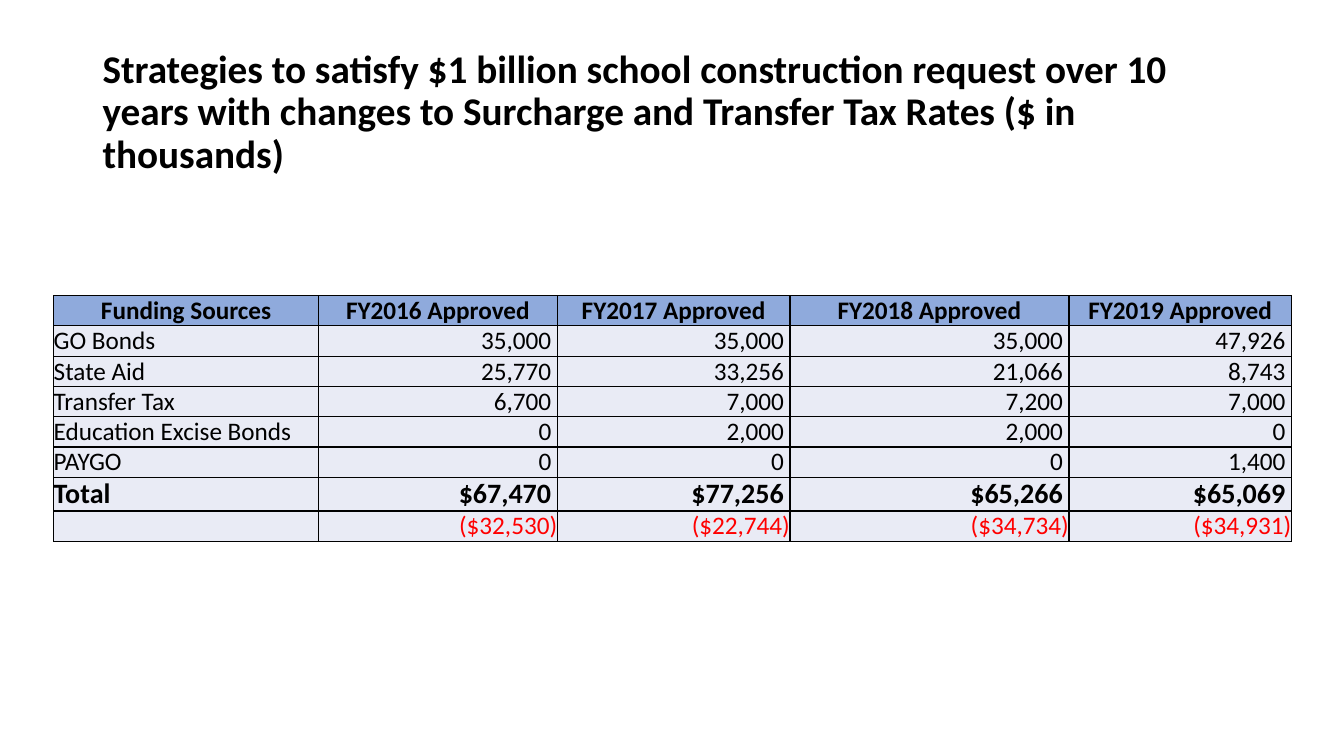
from dataclasses import dataclass

from lxml.etree import SubElement
from pptx import Presentation
from pptx.dml.color import RGBColor as Rgb
from pptx.enum.text import MSO_ANCHOR as Anchor, PP_ALIGN as Align
from pptx.oxml.ns import qn
from pptx.util import Inches, Pt


@dataclass(frozen=True)
class Theme:
    """Colours, font and type sizes of the slide."""
    font: str = "Calibri"
    ink: str = "000000"
    shortfall: str = "FF0000"
    header_fill: str = "8FAADC"
    body_fill: str = "E9EBF5"
    title_size: int = 28
    body_size: int = 18
    total_size: int = 20
    rule_width: int = 1


THEME = Theme()
SLIDE_W, SLIDE_H = Inches(13.33), Inches(7.5)
TITLE_BOX = (0.069, 0.053, 0.863, 0.193)
TABLE_BOX = (0.04, 0.391, 0.921, 0.288)
COLUMN_WEIGHTS = (2.63, 2.37, 2.31, 2.77, 2.21)
NUMBER_GAP = Inches(0.06)

TITLE = ("Strategies to satisfy $1 billion school construction request over 10 years "
         "with changes to Surcharge and Transfer Tax Rates ($ in thousands)")
HEADER = ("Funding Sources", "FY2016 Approved", "FY2017 Approved",
          "FY2018 Approved", "FY2019 Approved")
SOURCES = (
    ("GO Bonds", "35,000", "35,000", "35,000", "47,926"),
    ("State Aid", "25,770", "33,256", "21,066", "8,743"),
    ("Transfer Tax", "6,700", "7,000", "7,200", "7,000"),
    ("Education Excise Bonds", "0", "2,000", "2,000", "0"),
    ("PAYGO", "0", "0", "0", "1,400"),
)
TOTAL = ("Total", "$67,470", "$77,256", "$65,266", "$65,069")
SHORTFALL = ("", "($32,530)", "($22,744)", "($34,734)", "($34,931)")


def place(box):
    """Turn shares of the slide into lengths."""
    left, top, width, height = box
    return (round(left * SLIDE_W), round(top * SLIDE_H),
            round(width * SLIDE_W), round(height * SLIDE_H))


def write(frame, text, size=THEME.body_size, color=THEME.ink, bold=False,
          align=Align.LEFT, spacing=1.0):
    """Put one formatted paragraph into a text frame."""
    paragraph = frame.paragraphs[0]
    paragraph.alignment = align
    paragraph.line_spacing = spacing
    paragraph.font.size = Pt(size)
    if text:
        run = paragraph.add_run()
        run.text = text
        run.font.name = THEME.font
        run.font.size = Pt(size)
        run.font.bold = bold
        run.font.color.rgb = Rgb.from_string(color)


def rule_cell(cell):
    """Draw a thin line on all four sides of a cell."""
    properties = cell._tc.get_or_add_tcPr()
    for side in ("a:lnL", "a:lnR", "a:lnT", "a:lnB"):
        line = SubElement(properties, qn(side), w=str(Pt(THEME.rule_width)))
        fill = SubElement(line, qn("a:solidFill"))
        SubElement(fill, qn("a:srgbClr"), val=THEME.ink)


def fill_row(cells, texts, fill=THEME.body_fill, label_align=Align.LEFT,
             value_align=Align.RIGHT, value_gap=NUMBER_GAP, **style):
    """Write a label and its values across one table row."""
    for index, (cell, text) in enumerate(zip(cells, texts)):
        cell.margin_left = cell.margin_top = cell.margin_bottom = 0
        cell.margin_right = value_gap if index else 0
        cell.vertical_anchor = Anchor.BOTTOM
        rule_cell(cell)
        cell.fill.solid()
        cell.fill.fore_color.rgb = Rgb.from_string(fill)
        write(cell.text_frame, text, align=value_align if index else label_align, **style)


def add_title(slide, box):
    """Place the heading in its box."""
    frame = slide.shapes.add_textbox(*place(box)).text_frame
    frame.word_wrap = True
    frame.vertical_anchor = Anchor.MIDDLE
    write(frame, TITLE, size=THEME.title_size, bold=True, spacing=0.9)


def add_funding_table(slide, box):
    """Place the table of funding by source and fiscal year."""
    rows = [
        (HEADER, dict(fill=THEME.header_fill, bold=True, label_align=Align.CENTER,
                      value_align=Align.CENTER, value_gap=0)),
        *((source, {}) for source in SOURCES),
        (TOTAL, dict(size=THEME.total_size, bold=True)),
        (SHORTFALL, dict(color=THEME.shortfall, value_gap=0)),
    ]
    left, top, width, height = place(box)
    table = slide.shapes.add_table(len(rows), len(HEADER), left, top, width, height).table
    table.first_row = table.horz_banding = False
    for column, weight in zip(table.columns, COLUMN_WEIGHTS):
        column.width = round(width * weight / sum(COLUMN_WEIGHTS))
    for row, (texts, style) in zip(table.rows, rows):
        row.height = Inches(0.27)
        fill_row(row.cells, texts, **style)


def main():
    """Build and save the slide."""
    deck = Presentation()
    deck.slide_width, deck.slide_height = SLIDE_W, SLIDE_H
    slide = deck.slides.add_slide(deck.slide_layouts[6])
    add_title(slide, TITLE_BOX)
    add_funding_table(slide, TABLE_BOX)
    deck.save("out.pptx")


if __name__ == "__main__":
    main()
